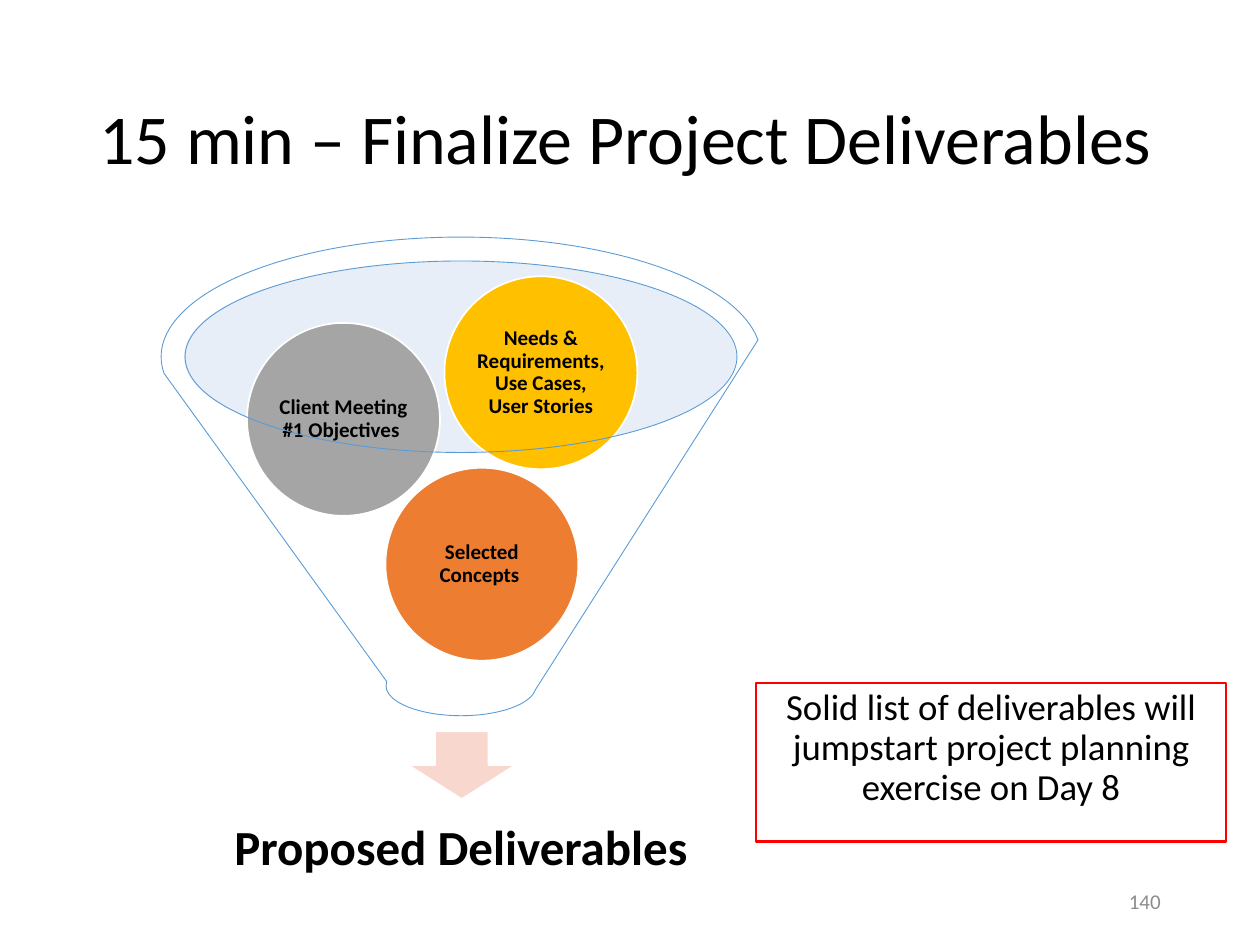
from lxml import etree
from pptx import Presentation
from pptx.dml.color import RGBColor
from pptx.enum import shapes, text
from pptx.oxml.ns import qn
from pptx.util import Cm, Pt

BLACK = RGBColor(0, 0, 0)
WHITE = RGBColor(255, 255, 255)
RED = RGBColor(255, 0, 0)
GREY_TEXT = RGBColor(0x8C, 0x8C, 0x8C)
ORANGE = RGBColor(0xED, 0x7D, 0x31)
GREY = RGBColor(0xA5, 0xA5, 0xA5)
GOLD = RGBColor(0xFF, 0xC0, 0)
BLUE = RGBColor(0x5B, 0x9B, 0xD5)
PALE_BLUE = RGBColor(0xC4, 0xD5, 0xEB)
PALE_ORANGE = RGBColor(0xF8, 0xD7, 0xCE)

SHAPE = shapes.MSO_SHAPE
ALIGN = text.PP_ALIGN
ANCHOR = text.MSO_ANCHOR
CIRCLES = [
    ("Selected Concepts ", ORANGE, 4.52, 4.65),
    ("Client Meeting #1 Objectives ", GREY, 1.73, 1.73),
    ("Needs & Requirements, Use Cases, User Stories", GOLD, 5.71, 0.79),
]


def write(sp, words, size, color=BLACK, align=ALIGN.CENTER, anchor=ANCHOR.MIDDLE,
          bold=False, inset=None, spacing=0.9):
    """Put one formatted paragraph into a shape and return it."""
    tf = sp.text_frame
    tf.word_wrap = True
    tf.auto_size = text.MSO_AUTO_SIZE.NONE
    tf.vertical_anchor = anchor
    if inset is not None:
        tf.margin_left = tf.margin_right = tf.margin_top = tf.margin_bottom = Cm(inset)
    p = tf.paragraphs[0]
    p.text = words
    p.alignment = align
    p.line_spacing = spacing
    p.font.name = "Calibri"
    p.font.size = Pt(size)
    p.font.bold = bold
    p.font.color.rgb = color
    return p


def add_shape(s, kind, x, y, w, h, fill=None, line=None, width=1):
    """Add a preset shape, measured in centimetres, without a shadow."""
    sp = s.shapes.add_shape(kind, Cm(x), Cm(y), Cm(w), Cm(h))
    sp.shadow.inherit = False
    if fill is None:
        sp.fill.background()
    else:
        sp.fill.solid()
        sp.fill.fore_color.rgb = fill
    if line is None:
        sp.line.fill.background()
    else:
        sp.line.color.rgb = line
        sp.line.width = Pt(width)
    return sp


def add_title(s, x, y, w, h):
    """Place and format the title placeholder."""
    sp = s.shapes.title
    sp.left, sp.top, sp.width, sp.height = Cm(x), Cm(y), Cm(w), Cm(h)
    write(sp, "15 min – Finalize Project Deliverables", 40, align=ALIGN.LEFT)


def add_funnel(s, x, y, w, h):
    """Draw the funnel with its three inputs, arrow and result."""
    mouth = add_shape(s, SHAPE.OVAL, x + 0.46, y + 0.48, 11.13, 3.86, PALE_BLUE)
    color = mouth.fill._xPr.find(qn("a:solidFill"))[0]
    etree.SubElement(color, qn("a:alpha"), val="40000")
    add_shape(s, SHAPE.DOWN_ARROW, x + 4.98, y + 9.96, 2.16, 1.37, PALE_ORANGE, WHITE)
    result = s.shapes.add_textbox(Cm(x + 0.86), Cm(y + 11.05), Cm(10.36), Cm(2.59))
    write(result, "Proposed Deliverables", 28, bold=True, inset=0.56)
    for words, fill, dx, dy in CIRCLES:
        circle = add_shape(s, SHAPE.OVAL, x + dx, y + dy, 3.89, 3.89, fill, WHITE)
        write(circle, words, 12, bold=True, inset=0.05)
    add_shape(s, SHAPE.FUNNEL, x, y, w, h, line=BLUE, width=0.5)


def add_note(s, x, y, w, h):
    """Add the red-framed note."""
    sp = add_shape(s, SHAPE.RECTANGLE, x, y, w, h, line=RED, width=1.5)
    p = write(sp, "Solid list of deliverables will jumpstart project planning "
              "exercise on Day 8", 21, anchor=ANCHOR.TOP)
    p.space_before = Pt(7.5)


def add_page_number(s, x, y, w, h):
    """Add the page number."""
    sp = s.shapes.add_textbox(Cm(x), Cm(y), Cm(w), Cm(h))
    write(sp, "140", 12, GREY_TEXT, ALIGN.RIGHT, spacing=1.0)


def main():
    """Build the slide and save it."""
    prs = Presentation()
    prs.slide_width, prs.slide_height = Cm(25.4), Cm(19.05)
    s = prs.slides.add_slide(prs.slide_layouts[5])
    add_title(s, 1.75, 1.02, 21.9, 3.68)
    add_note(s, 15.24, 13.77, 9.48, 3.2)
    add_page_number(s, 17.93, 17.65, 5.72, 1.02)
    add_funnel(s, 3.25, 4.78, 12.09, 9.65)
    prs.save("out.pptx")


if __name__ == "__main__":
    main()
